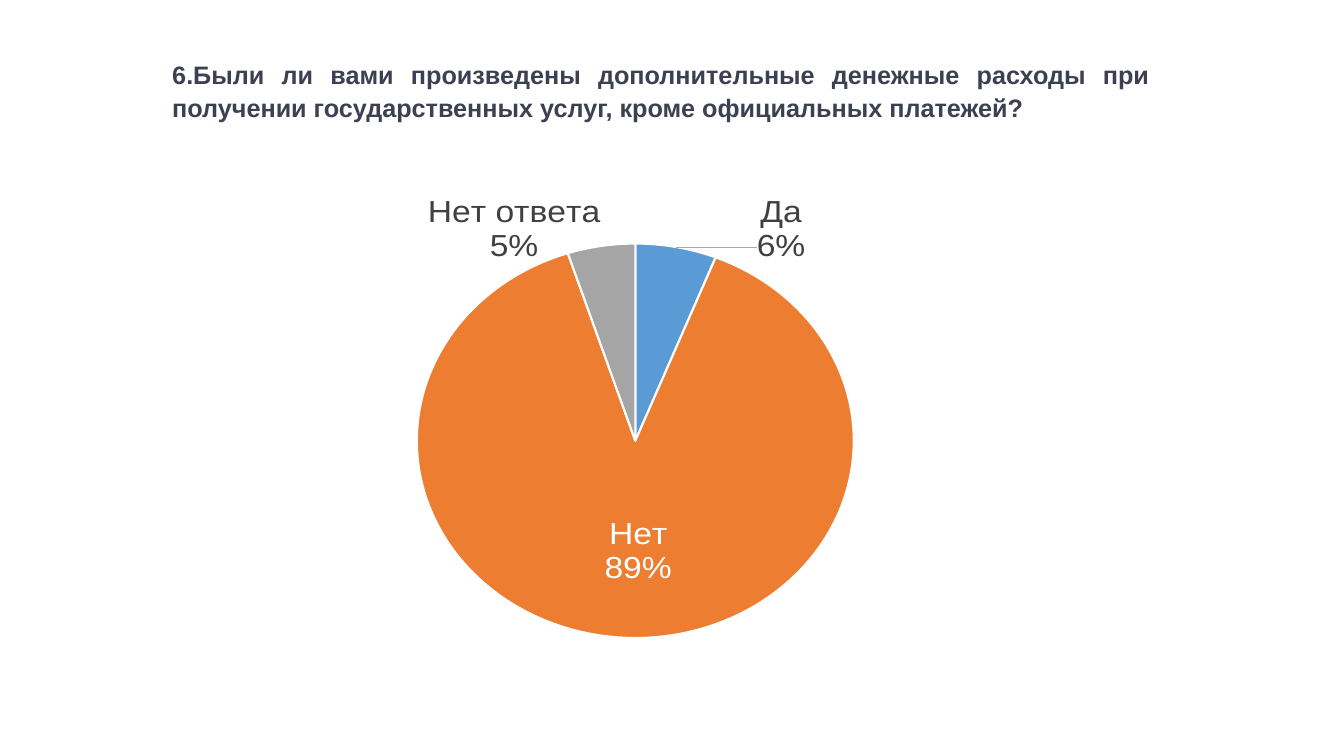
from dataclasses import dataclass

from lxml.etree import SubElement
from pptx import Presentation
from pptx.chart.chart import Chart
from pptx.chart.data import CategoryChartData
from pptx.dml.color import RGBColor
from pptx.enum.chart import XL_CHART_TYPE as ChartType, XL_LABEL_POSITION as LabelPosition
from pptx.enum.text import PP_ALIGN as Align
from pptx.oxml import parse_xml
from pptx.oxml.ns import nsdecls, qn
from pptx.slide import Slide
from pptx.util import Inches, Pt


@dataclass(frozen=True)
class Theme:
    font: str = "Arial"
    heading: str = "3C4052"
    label: str = "404040"
    leader: str = "A6A6A6"
    white: str = "FFFFFF"
    heading_size: int = 18
    chart_size: int = 20
    label_size: int = 24


@dataclass(frozen=True)
class Answer:
    name: str
    share: int
    fill: str
    label_color: str
    shift: tuple[float, float]


THEME = Theme()
QUESTION = (
    "6.Были ли вами произведены дополнительные денежные расходы при "
    "получении государственных услуг, кроме официальных платежей?"
)
ANSWERS = [
    Answer("Да", 6, "5B9BD5", THEME.label, (0.08, 0.04)),
    Answer("Нет", 89, "ED7D31", THEME.white, (0.01, -0.26)),
    Answer("Нет ответа", 5, "A5A5A5", THEME.label, (0, 0.04)),
]


def manual_layout(inner: bool = False, **values: float):
    target = '<c:layoutTarget val="inner"/>' if inner else ""
    modes = '<c:xMode val="edge"/><c:yMode val="edge"/>' if inner else ""
    sizes = "".join(f'<c:{key} val="{value}"/>' for key, value in values.items())
    return parse_xml(
        f'<c:layout {nsdecls("c")}><c:manualLayout>{target}{modes}{sizes}'
        "</c:manualLayout></c:layout>"
    )


def add_question(page: Slide) -> None:
    box = page.shapes.add_textbox(Inches(1.61), Inches(0.52), Inches(9.89), Inches(0.75))
    box.text_frame.word_wrap = True
    box.text_frame.text = QUESTION
    para = box.text_frame.paragraphs[0]
    para.alignment = Align.JUSTIFY
    para.line_spacing = 1.07
    span = para.runs[0]
    span.font.name = THEME.font
    span.font.size = Pt(THEME.heading_size)
    span.font.bold = True
    span.font.color.rgb = RGBColor.from_string(THEME.heading)


def style_answer(chart: Chart, index: int, answer: Answer) -> None:
    series = chart.plots[0].series[0]
    point = series.points[index]
    point.format.fill.solid()
    point.format.fill.fore_color.rgb = RGBColor.from_string(answer.fill)
    point.format.line.color.rgb = RGBColor.from_string(THEME.white)
    point.format.line.width = Pt(1.5)

    label = point.data_label
    label.font.name = THEME.font
    label.font.size = Pt(THEME.label_size)
    label.font.color.rgb = RGBColor.from_string(answer.label_color)
    label.position = LabelPosition.OUTSIDE_END

    node = series._element.findall(f".//{qn('c:dLbl')}")[index]
    for flag, shown in (("showVal", "0"), ("showCatName", "1"), ("showPercent", "1")):
        node.find(qn(f"c:{flag}")).set("val", shown)
    SubElement(node, qn("c:separator")).text = "\n"
    x, y = answer.shift
    node.find(qn("c:idx")).addnext(manual_layout(x=x, y=y))


def color_leader_lines(chart: Chart) -> None:
    labels = chart.plots[0].series[0]._element.find(qn("c:dLbls"))
    labels.find(qn("c:showLeaderLines")).addnext(
        parse_xml(
            f'<c:leaderLines {nsdecls("c", "a")}><c:spPr><a:ln w="9525"><a:solidFill>'
            f'<a:srgbClr val="{THEME.leader}"/></a:solidFill></a:ln></c:spPr></c:leaderLines>'
        )
    )


def add_answers_pie(page: Slide) -> None:
    data = CategoryChartData()
    data.categories = [answer.name for answer in ANSWERS]
    data.add_series("Series 1", [answer.share for answer in ANSWERS])
    frame = page.shapes.add_chart(
        ChartType.PIE, Inches(1.47), Inches(1.71), Inches(9.86), Inches(5.35), data
    )
    chart = frame.chart
    chart.has_title = False
    chart.has_legend = False
    chart.font.name = THEME.font
    chart.font.size = Pt(THEME.chart_size)
    chart.plots[0].vary_by_categories = True

    area = chart._chartSpace.chart.plotArea
    for layout in area.findall(qn("c:layout")):
        area.remove(layout)
    area.insert(0, manual_layout(inner=True, x=0.27, y=0.1, w=0.44, h=0.81))

    for index, answer in enumerate(ANSWERS):
        style_answer(chart, index, answer)
    color_leader_lines(chart)


def main() -> None:
    deck = Presentation()
    deck.slide_width = Inches(13.33)
    deck.slide_height = Inches(7.5)
    page = deck.slides.add_slide(deck.slide_layouts[6])
    add_question(page)
    add_answers_pie(page)
    deck.save("out.pptx")


if __name__ == "__main__":
    main()
